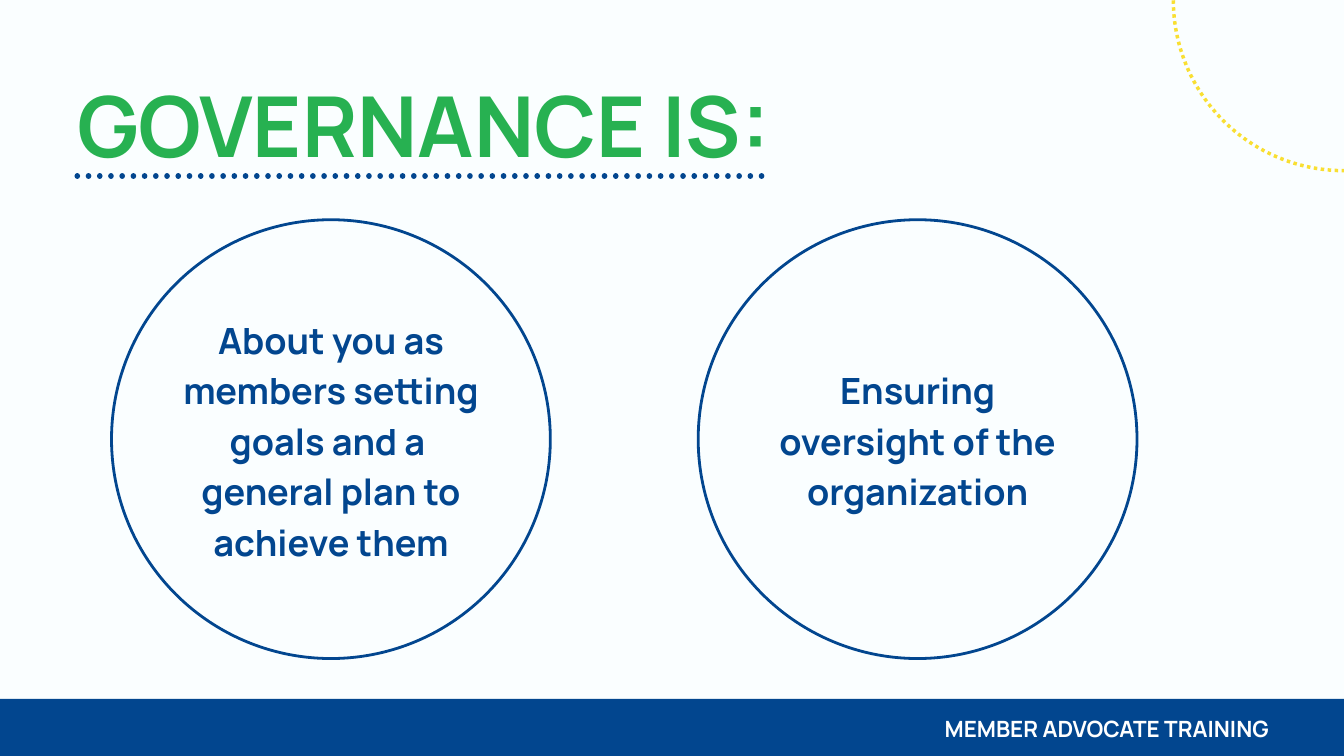
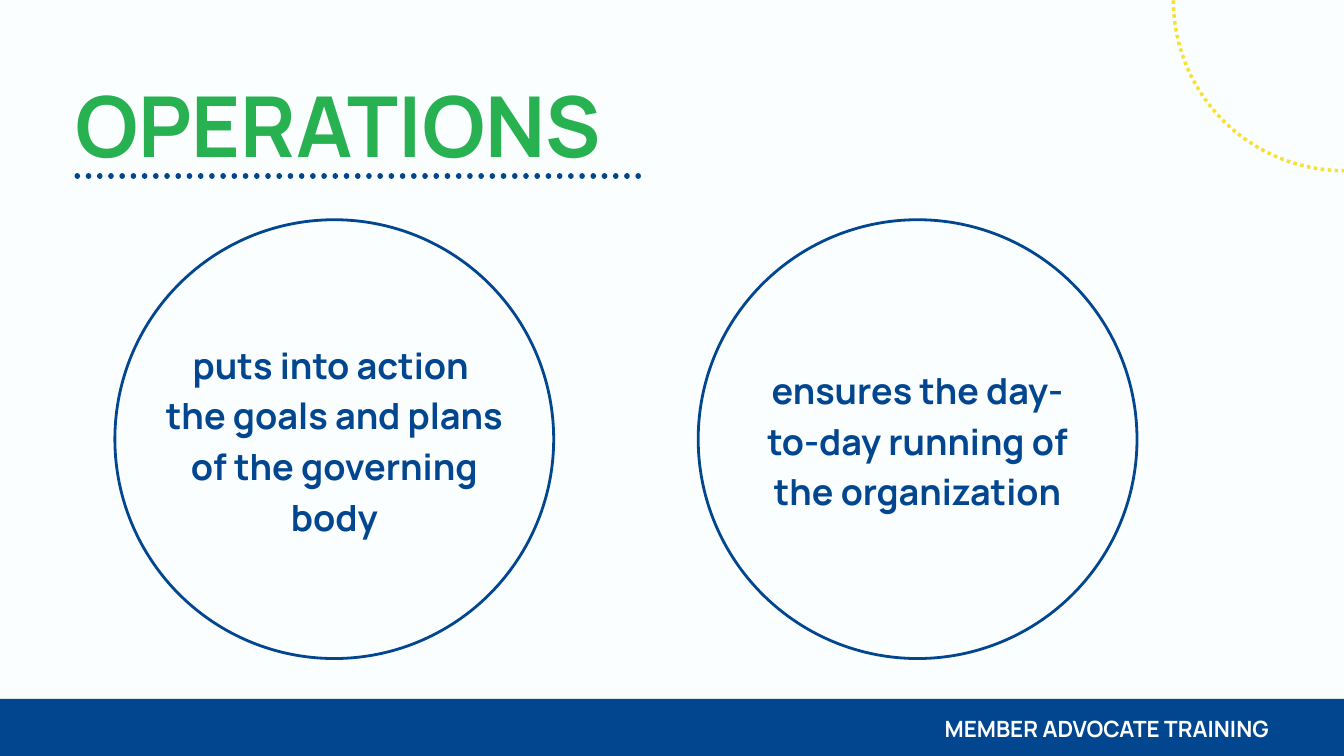
from dataclasses import dataclass

from pptx import Presentation
from pptx.dml.color import RGBColor
from pptx.enum.dml import MSO_LINE_DASH_STYLE as Dash
from pptx.enum.shapes import MSO_CONNECTOR as Connector, MSO_SHAPE as Shape
from pptx.enum.text import MSO_ANCHOR as Anchor, MSO_AUTO_SIZE as AutoSize, PP_ALIGN as Align
from pptx.oxml import parse_xml
from pptx.oxml.ns import nsdecls
from pptx.util import Inches, Pt


@dataclass(frozen=True)
class Theme:
    font: str = "Manrope"
    paper: str = "FAFEFF"
    blue: str = "02468F"
    green: str = "27B151"
    yellow: str = "F9DF32"
    white: str = "FFFFFF"
    title_size: float = 90
    body_size: float = 38.7
    footer_size: float = 24
    leading: float = 1.4


THEME = Theme()
FOOTER = "MEMBER ADVOCATE TRAINING"

# Each circle: left edge, text width, number of text lines, paragraphs, type size
SLIDES = [
    {
        "title": "GOVERNANCE IS:",
        "title_box": (1.15, 0.85, 14.63, 1.64),
        "rule_end": 11.39,
        "circles": [
            (1.66, 5.19, 5, ["About you as members setting goals and a ",
                             "general plan to achieve them"], THEME.body_size),
            (10.39, 4.53, 3, ["Ensuring oversight of the organization"], THEME.body_size),
        ],
    },
    {
        "title": "OPERATIONS",
        "title_box": (1.12, 0.85, 10.27, 1.69),
        "rule_end": 9.54,
        "circles": [
            (1.71, 5.19, 4, ["puts into action ",
                             "the goals and plans of the governing body"], THEME.body_size),
            (10.39, 4.53, 3, ["ensures the day-to-day running of the organization"], 38.5),
        ],
    },
]

SLIDE_WIDTH, SLIDE_HEIGHT = 20, 11.25
RULE_LEFT, RULE_TOP = 1.15, 2.62
CIRCLE_TOP, CIRCLE_SIZE = 3.27, 6.53
TEXT_MIDDLE, LINE_HEIGHT = 6.5, 0.75
CORNER_RADIUS = 2.54


def rgb(value):
    return RGBColor.from_string(value)


def place(shape, left, top, width, height):
    shape.left, shape.top = Inches(left), Inches(top)
    shape.width, shape.height = Inches(width), Inches(height)


def write(shape, paragraphs, *, size, color, align, leading=None):
    """Fill a shape with bold text, without margins and with fixed line spacing."""
    frame = shape.text_frame
    frame.word_wrap = True
    frame.auto_size = AutoSize.NONE
    frame.vertical_anchor = Anchor.TOP
    frame.margin_left = frame.margin_top = frame.margin_right = frame.margin_bottom = 0
    for index, text in enumerate(paragraphs):
        para = frame.add_paragraph() if index else frame.paragraphs[0]
        para.alignment = align
        para.line_spacing = Pt(leading or round(size * THEME.leading, 1))
        span = para.add_run()
        span.text = text
        font = span.font
        font.name, font.size, font.bold = THEME.font, Pt(size), True
        font.color.rgb = rgb(color)


def add_text(page, box, paragraphs, **style):
    shape = page.shapes.add_textbox(*map(Inches, box))
    write(shape, paragraphs, **style)


def set_line(line, color, width, dash=None):
    line.color.rgb = rgb(color)
    line.width = Pt(width)
    if dash:
        line.dash_style = dash


def add_ring(page, left, top, size, color, width, dash=None):
    ring = page.shapes.add_shape(Shape.OVAL, *map(Inches, (left, top, size, size)))
    ring.shadow.inherit = False
    ring.fill.background()
    set_line(ring.line, color, width, dash)


def add_title(page, title, box, rule_end):
    place(page.shapes.title, *box)
    write(page.shapes.title, [title], size=THEME.title_size, color=THEME.green, align=Align.LEFT)
    ends = (RULE_LEFT, RULE_TOP, rule_end, RULE_TOP)
    rule = page.shapes.add_connector(Connector.STRAIGHT, *map(Inches, ends))
    set_line(rule.line, THEME.blue, 6, Dash.ROUND_DOT)
    rule.get_or_add_ln().set("cap", "rnd")
    rule._element.spPr.append(parse_xml(f"<a:effectLst {nsdecls('a')}/>"))


def add_frame(page):
    """Add the footer band and the dotted corner ring that every slide has."""
    band = page.shapes.add_shape(Shape.RECTANGLE, *map(Inches, (0, 10.4, 20.22, 0.88)))
    band.shadow.inherit = False
    band.fill.solid()
    band.fill.fore_color.rgb = rgb(THEME.blue)
    band.line.fill.background()
    add_ring(page, SLIDE_WIDTH - CORNER_RADIUS, -CORNER_RADIUS, 2 * CORNER_RADIUS,
             THEME.yellow, 3.75, Dash.ROUND_DOT)
    add_text(page, (12.1, 10.58, 6.78, 0.44), [FOOTER],
             size=THEME.footer_size, color=THEME.white, align=Align.RIGHT)


def add_circle(page, left, text_width, lines, paragraphs, size):
    add_ring(page, left, CIRCLE_TOP, CIRCLE_SIZE, THEME.blue, 3)
    height = lines * LINE_HEIGHT
    box = (left + (CIRCLE_SIZE - text_width) / 2, TEXT_MIDDLE - height / 2, text_width, height)
    add_text(page, box, paragraphs, size=size, color=THEME.blue, align=Align.CENTER, leading=54.2)


def main():
    deck = Presentation()
    deck.slide_width, deck.slide_height = Inches(SLIDE_WIDTH), Inches(SLIDE_HEIGHT)
    background = deck.slide_master.background.fill
    background.solid()
    background.fore_color.rgb = rgb(THEME.paper)
    title_only = deck.slide_layouts.get_by_name("Title Only")
    for content in SLIDES:
        page = deck.slides.add_slide(title_only)
        add_title(page, content["title"], content["title_box"], content["rule_end"])
        add_frame(page)
        for circle in content["circles"]:
            add_circle(page, *circle)
    deck.save("out.pptx")


if __name__ == "__main__":
    main()
